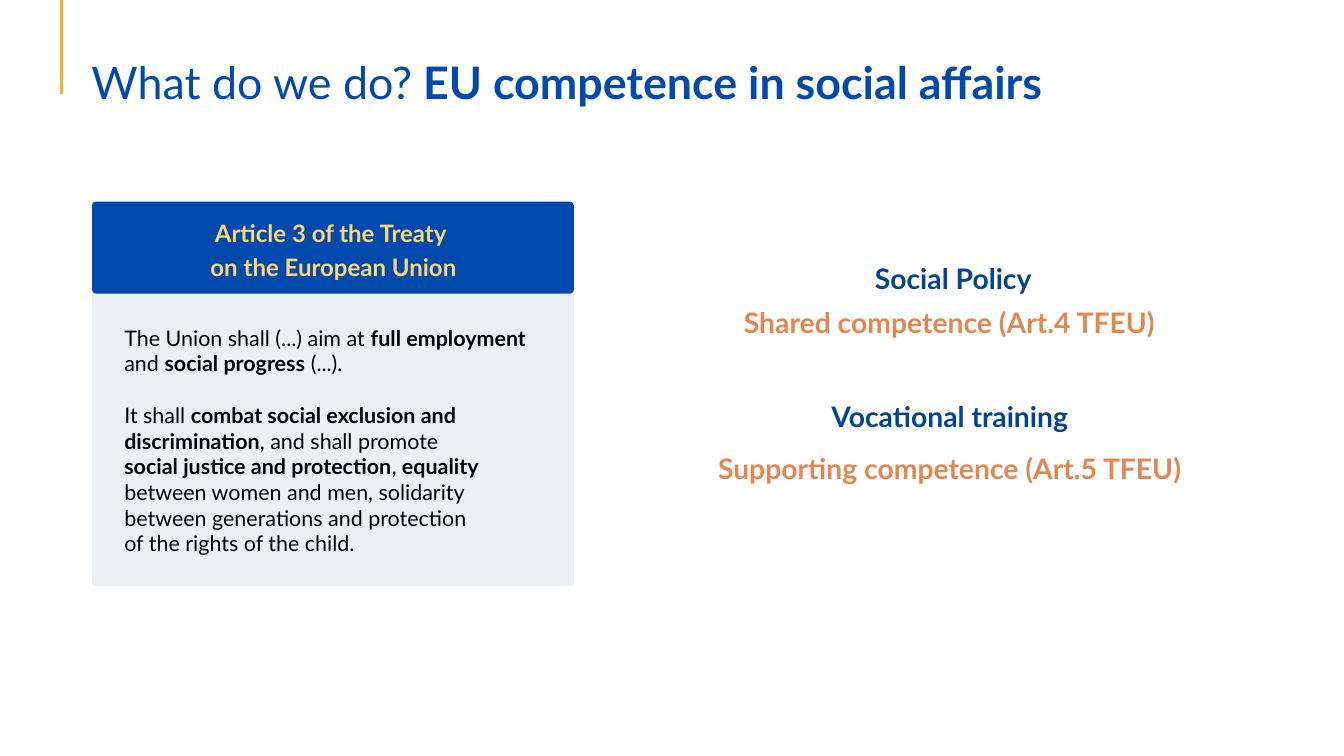
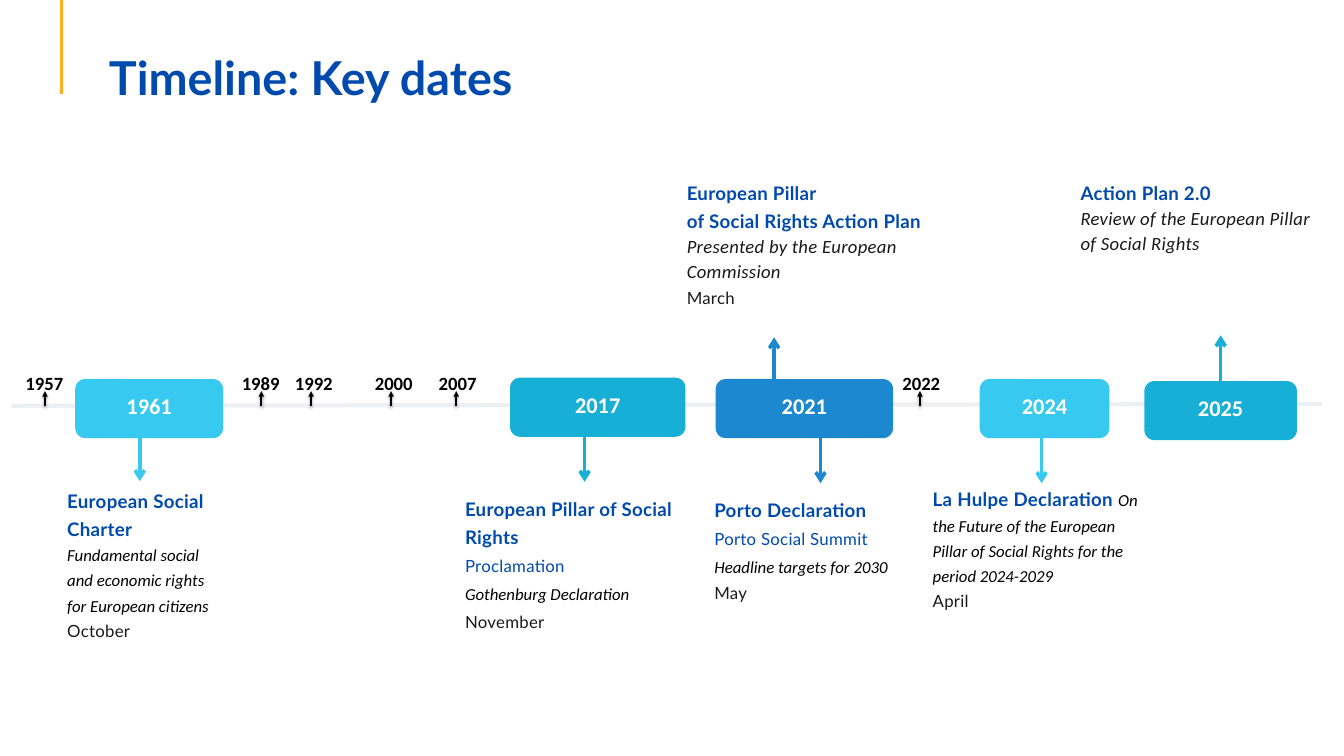
from dataclasses import dataclass

from lxml import etree
from pptx import Presentation
from pptx import util as u
from pptx.dml.color import RGBColor
from pptx.enum import shapes, text
from pptx.oxml import parse_xml
from pptx.oxml.ns import nsdecls, qn


@dataclass
class Style:
    font: str
    size: float
    color: str
    bold: bool = False
    italic: bool = False
    spacing: float = 0


class Theme:
    blue, navy, ink, black, white = "004AAD", "024494", "191919", "000000", "FFFFFF"
    gold, yellow, orange, grey = "FDAF20", "FED774", "E18752", "EDF0F2"
    sky, teal, azure = "37C9EF", "18AFD6", "1C88CF"
    styles = {
        "title": Style("Lato", 48, blue),
        "title bold": Style("Lato", 48, blue, bold=True),
        "title large": Style("Lato", 50, blue, bold=True),
        "card head": Style("Lato", 25.7, yellow, bold=True),
        "treaty": Style("Lato", 23, black),
        "treaty bold": Style("Lato", 23, black, bold=True),
        "policy": Style("Lato", 30.3, navy, bold=True),
        "competence": Style("Lato", 30.3, orange, bold=True),
        "milestone": Style("Calibri", 24, white, bold=True),
        "tick": Style("Calibri", 20, black, bold=True),
        "heading": Style("Lato", 20, blue, bold=True, spacing=0.3),
        "subheading": Style("Lato", 18, blue, spacing=0.3),
        "detail": Style("Calibri", 18, black, italic=True),
        "summary": Style("Calibri", 20, ink, italic=True, spacing=0.3),
        "month": Style("Lato", 18, ink, spacing=0.3),
    }


LEFT, CENTER = text.PP_ALIGN.LEFT, text.PP_ALIGN.CENTER

COMPETENCE_TITLE = [("What do we do?", "title"),
                    (" EU competence in social affairs", "title bold")]
CARD_HEAD = [("Article 3 of the Treaty \non the European Union", "card head")]
TREATY = [
    (None, [("The Union shall (...) aim at ", "treaty"),
            ("full employment ", "treaty bold"),
            ("and ", "treaty"),
            ("social progress", "treaty bold"),
            (" (...).", "treaty")]),
    (None, [("It shall ", "treaty"),
            ("combat social exclusion and discrimination", "treaty bold"),
            (", and shall promote \n", "treaty"),
            ("social justice and protection", "treaty bold"),
            (",", "treaty"),
            (" equality", "treaty bold"),
            (" between women and men, solidarity between generations and protection "
             "\nof the rights of the child.", "treaty")]),
]
COMPETENCES = [
    ((12.16, 3.81, 3.95, 0.57), " Social Policy", "policy"),
    ((10.4, 4.45, 7.46, 0.56), "Shared competence (Art.4 TFEU)", "competence"),
    ((12.05, 5.86, 4.17, 0.57), "Vocational training", "policy"),
    ((9.91, 6.63, 8.45, 0.56), "Supporting competence (Art.5 TFEU)", "competence"),
]

TIMELINE_TITLE = [("Timeline: Key dates ", "title large")]
TICKS = [("1957", 0.28, 0.67), ("1989", 3.5, 3.89), ("1992", 4.29, 4.63),
         ("2000", 5.48, 5.82), ("2007", 6.43, 6.79), ("2022", 13.33, 13.69)]
MILESTONES = [
    ("1961", 1.12, 5.64, 2.2, Theme.sky, [(2.08, 7.16)]),
    ("2017", 7.59, 5.62, 2.61, Theme.teal, [(8.7, 7.17)]),
    ("2021", 10.65, 5.64, 2.64, Theme.azure, [(12.21, 7.19), (11.52, 5.02)]),
    ("2024", 14.58, 5.64, 1.93, Theme.sky, [(15.5, 7.19)]),
    ("2025", 17.03, 5.67, 2.27, Theme.teal, [(18.17, 4.99)]),
]
EVENTS = [
    ((1, 7.2, 2.2, 2.71), [
        (30, [("European Social Charter", "heading")]),
        (27, [("Fundamental social and economic rights for European citizens", "detail")]),
        (27, [("October", "month")])]),
    ((6.92, 7.32, 3.54, 2.49), [
        (30, [("European Pillar of Social Rights", "heading")]),
        (30, [("Proclamation", "subheading")]),
        (30, [("Gothenburg Declaration", "detail")]),
        (30, [("November", "month")])]),
    ((10.22, 2.62, 4.2, 2.34), [
        (30, [("European Pillar \nof Social Rights Action Plan", "heading")]),
        (27, [("Presented by the European Commission", "summary")]),
        (27, [("March", "month")])]),
    ((10.63, 7.34, 3.09, 2.04), [
        (30, [("Porto Declaration", "heading")]),
        (30, [("Porto Social Summit", "subheading")]),
        (30, [("Headline targets for 2030", "detail")]),
        (27, [("May", "month")])]),
    ((13.88, 7.22, 3.24, 2.24), [
        (27, [("La Hulpe Declaration ", "heading"),
              ("On the Future of the European Pillar of Social Rights "
               "for the period 2024-2029", "detail")]),
        (27, [("April", "month")])]),
    ((16.08, 2.62, 3.6, 1.17), [
        (30, [("Action Plan 2.0", "heading")]),
        (27, [("Review of the European Pillar of Social Rights", "summary")])]),
]


def format_run(r, style):
    f = r.font
    f.name, f.size, f.bold, f.italic = style.font, u.Pt(style.size), style.bold, style.italic
    f.color.rgb = RGBColor.from_string(style.color)
    if style.spacing:
        r._r.get_or_add_rPr().set("spc", str(round(style.spacing * 100)))


def write(tf, paragraphs, align=LEFT, inset=0):
    tf.word_wrap = True
    tf.margin_left = tf.margin_right = tf.margin_top = tf.margin_bottom = u.Inches(inset)
    for i, (line_spacing, runs) in enumerate(paragraphs):
        p = tf.add_paragraph() if i else tf.paragraphs[0]
        p.alignment = align
        if line_spacing:
            p.line_spacing = u.Pt(line_spacing)
        for words, name in runs:
            for n, line in enumerate(words.split("\n")):
                if n:
                    p.add_line_break()
                if line:
                    r = p.add_run()
                    r.text = line
                    format_run(r, Theme.styles[name])


def place(sp, box):
    sp.left, sp.top, sp.width, sp.height = (u.Inches(v) for v in box)


def fit(tf):
    tf.vertical_anchor = text.MSO_ANCHOR.TOP
    tf.auto_size = text.MSO_AUTO_SIZE.SHAPE_TO_FIT_TEXT


def add_text(s, box, paragraphs, align=LEFT):
    sp = s.shapes.add_textbox(*(u.Inches(v) for v in box))
    write(sp.text_frame, paragraphs, align)
    fit(sp.text_frame)
    return sp


def add_line(s, start, end, color, width, arrow=None, shadow=False):
    c = s.shapes.add_connector(shapes.MSO_CONNECTOR.STRAIGHT,
                               *(u.Inches(v) for v in start + end))
    c.line.color.rgb = RGBColor.from_string(color)
    c.line.width = u.Pt(width)
    if arrow:
        etree.SubElement(c.line._get_or_add_ln(), qn("a:tailEnd"), type=arrow)
    effects = etree.SubElement(c._element.spPr, qn("a:effectLst"))
    if shadow:
        effects.append(parse_xml(
            f'<a:outerShdw {nsdecls("a")} blurRad="{u.Pt(3.1)}" dist="{u.Pt(1.6)}" '
            f'dir="5400000" rotWithShape="0"><a:srgbClr val="{Theme.black}">'
            '<a:alpha val="38000"/></a:srgbClr></a:outerShdw>'))
    return c


def add_panel(s, box, color, radius):
    sp = s.shapes.add_shape(shapes.MSO_SHAPE.ROUNDED_RECTANGLE, *(u.Inches(v) for v in box))
    sp.adjustments[0] = radius / min(box[2:])
    sp.fill.solid()
    sp.fill.fore_color.rgb = RGBColor.from_string(color)
    sp.line.fill.background()
    sp.shadow.inherit = False
    return sp


def new_slide(prs, layout, title, box, line_spacing, align=LEFT):
    s = prs.slides.add_slide(prs.slide_layouts.get_by_name(layout))
    place(s.shapes.title, box)
    write(s.shapes.title.text_frame, [(line_spacing, title)], align)
    fit(s.shapes.title.text_frame)
    add_line(s, (0.92, 0), (0.92, 1.4), Theme.gold, 3)
    return s


def build_competence(prs):
    s = new_slide(prs, "Title and Content", COMPETENCE_TITLE, (1.36, 0.88, 16.76, 0.76), 53.3)
    body = s.placeholders[1]
    panel = add_panel(s, (1.37, 4.14, 7.17, 4.58), Theme.grey, 0.04)
    body._element.addprevious(panel._element)
    place(body, (1.85, 4.83, 6.22, 3.48))
    write(body.text_frame, TREATY)
    fit(body.text_frame)
    for p, gap in zip(body.text_frame.paragraphs, (0, 27.6)):
        p.space_before = u.Pt(gap)
        pPr = p._p.get_or_add_pPr()
        pPr.set("marL", "0")
        pPr.set("indent", "0")
        etree.SubElement(pPr, qn("a:buNone"))
    add_panel(s, (1.37, 3, 7.17, 1.37), Theme.blue, 0.06)
    add_text(s, (1.68, 3.18, 6.56, 0.99), [(36, CARD_HEAD)], CENTER)
    for box, words, style in COMPETENCES:
        add_text(s, box, [(42.5, [(words, style)])], CENTER)


def build_timeline(prs):
    s = new_slide(prs, "Title Only", TIMELINE_TITLE, (1.17, 0.79, 7.08, 0.8), 55.5, CENTER)
    add_line(s, (0.17, 6.04), (19.67, 6.01), Theme.grey, 4.5)
    for year, left, x in TICKS:
        sp = s.shapes.add_textbox(*(u.Inches(v) for v in (left, 5.49, 0.77, 0.44)))
        tf = sp.text_frame
        tf.text = year
        tf.word_wrap = False
        fit(tf)
        format_run(tf.paragraphs[0].runs[0], Theme.styles["tick"])
        add_line(s, (x, 6.04), (x, 5.82), Theme.black, 2, "triangle", shadow=True)
    height = 0.88
    for year, left, top, width, color, stems in MILESTONES:
        sp = add_panel(s, (left, top, width, height), color, 0.15)
        tf = sp.text_frame
        write(tf, [(31.2, [(year, "milestone")])], CENTER)
        tf.vertical_anchor = text.MSO_ANCHOR.MIDDLE
        tf.margin_bottom = u.Inches(0.12)
        for x, end in stems:
            down = end > top
            c = add_line(s, (x, top + height if down else top), (x, end), color, 3.75, "arrow")
            if abs(x - left - width / 2) < 0.01:
                c.begin_connect(sp, 2 if down else 0)
                c.end_x = c.begin_x
    for box, paragraphs in EVENTS:
        add_text(s, box, paragraphs)


def main():
    prs = Presentation()
    prs.slide_width, prs.slide_height = u.Inches(20), u.Inches(11.25)
    build_competence(prs)
    build_timeline(prs)
    prs.save("out.pptx")


if __name__ == "__main__":
    main()
